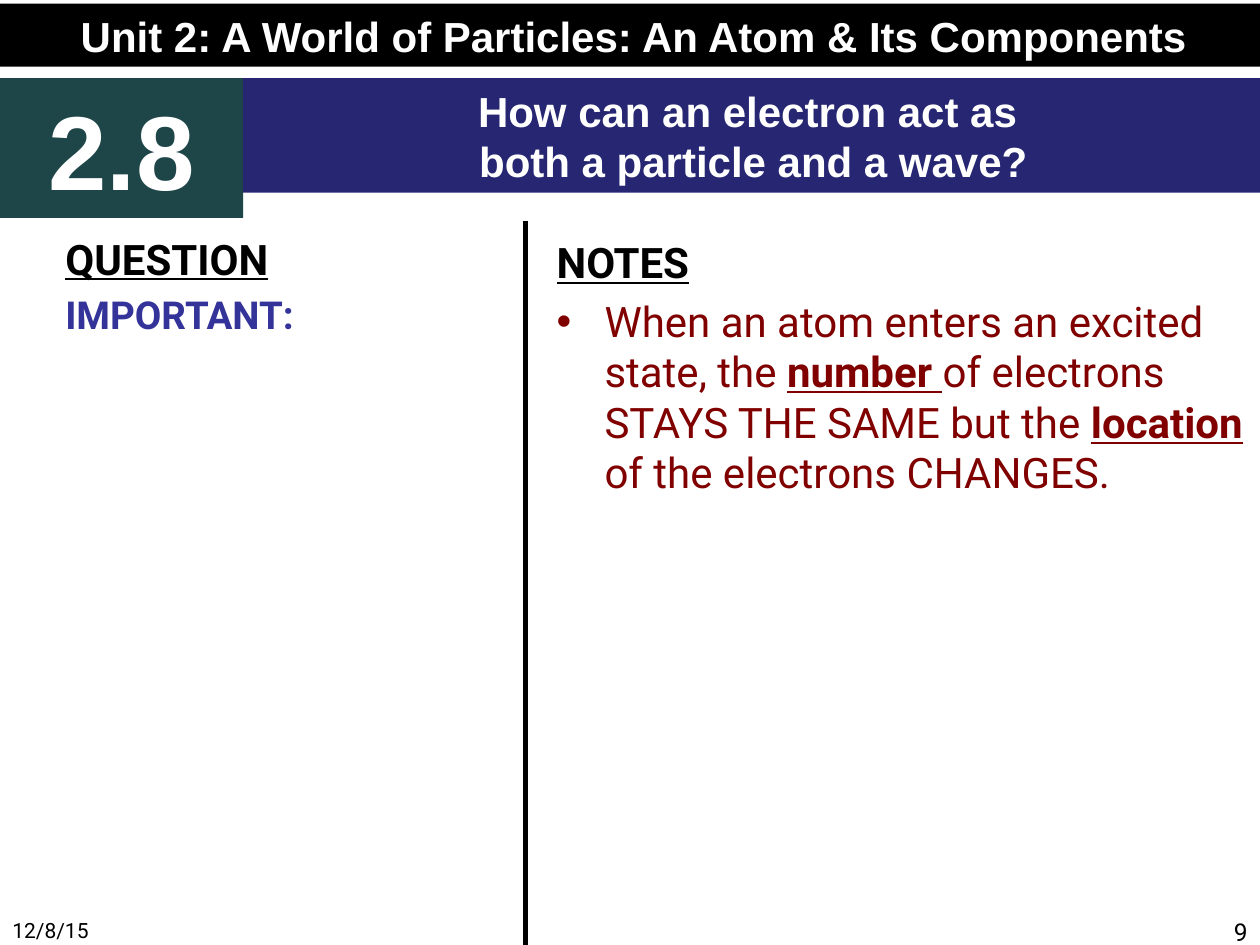
from pptx import Presentation
from pptx.dml.color import RGBColor
from pptx.enum.shapes import MSO_CONNECTOR, MSO_SHAPE
from pptx.enum.text import MSO_ANCHOR, PP_ALIGN
from pptx.oxml.ns import qn
from pptx.util import Inches, Pt
from lxml.etree import SubElement

BLACK = RGBColor(0x00, 0x00, 0x00)
WHITE = RGBColor(0xFF, 0xFF, 0xFF)
TEAL = RGBColor(0x1E, 0x46, 0x49)
NAVY = RGBColor(0x26, 0x26, 0x73)
BLUE = RGBColor(0x33, 0x33, 0x99)
MAROON = RGBColor(0x80, 0x00, 0x00)

PLAIN = {"bold": False, "underline": False}
KEYWORD = {"bold": True, "underline": True}
HEADING = {"name": "Roboto", "size": Pt(24), "bold": True, "underline": True}
BANNER = {"name": "Arial", "size": Pt(24), "bold": True}


def add_span(para, text, color, formats):
    span = para.add_run()
    span.text = text
    for name, value in formats.items():
        setattr(span.font, name, value)
    span.font.color.rgb = color


def add_text_box(page, box):
    frame = page.shapes.add_textbox(*map(Inches, box)).text_frame
    frame.word_wrap = True
    return frame


def add_banner(page, box, fill, lines, formats=BANNER):
    banner = page.shapes.add_shape(MSO_SHAPE.RECTANGLE, *map(Inches, box))
    banner.shadow.inherit = False
    banner.fill.solid()
    banner.fill.fore_color.rgb = fill
    banner.line.fill.background()
    frame = banner.text_frame
    frame.word_wrap = True
    frame.vertical_anchor = MSO_ANCHOR.MIDDLE
    for index, line in enumerate(lines):
        para = frame.add_paragraph() if index else frame.paragraphs[0]
        para.alignment = PP_ALIGN.CENTER
        add_span(para, line, WHITE, formats)


def add_divider(page, x, top, bottom):
    divider = page.shapes.add_connector(
        MSO_CONNECTOR.STRAIGHT, Inches(x), Inches(top), Inches(x), Inches(bottom))
    divider.line.color.rgb = BLACK
    divider.line.width = Pt(3)
    SubElement(divider._element.spPr, qn("a:effectLst"))


def add_bullet(para, indent):
    props = para._p.get_or_add_pPr()
    props.set("marL", str(indent))
    props.set("indent", str(-indent))
    SubElement(props, qn("a:buFont"), typeface="Arial")
    SubElement(props, qn("a:buChar"), char="•")


def add_question(page, box):
    frame = add_text_box(page, box)
    add_span(frame.paragraphs[0], "QUESTION", BLACK, HEADING)
    para = frame.add_paragraph()
    para.space_before = Pt(4.4)
    add_span(para, "IMPORTANT:", BLUE, HEADING | {"size": Pt(22), "underline": False})


def add_notes(page, box):
    frame = add_text_box(page, box)
    add_span(frame.paragraphs[0], "NOTES", BLACK, HEADING)
    para = frame.add_paragraph()
    para.space_before = Pt(4.8)
    add_bullet(para, Inches(0.38))
    for text, style in (
        ("When an atom enters an excited state, the ", PLAIN),
        ("number ", KEYWORD),
        ("of electrons STAYS THE SAME but the ", PLAIN),
        ("location", KEYWORD),
        (" of the electrons CHANGES.", PLAIN),
    ):
        add_span(para, text, MAROON, HEADING | style)


def add_footer(page, box, text, size, alignment):
    para = add_text_box(page, box).paragraphs[0]
    para.alignment = alignment
    add_span(para, text, BLACK, {"name": "Roboto", "size": Pt(size)})


def main():
    deck = Presentation()
    deck.slide_width, deck.slide_height = Inches(10), Inches(7.5)
    page = deck.slides.add_slide(deck.slide_layouts[6])
    add_footer(page, (0, 7.23, 2.33, 0.27), "12/8/15", 12, PP_ALIGN.LEFT)
    add_footer(page, (7.67, 7.23, 2.33, 0.27), "9", 14, PP_ALIGN.RIGHT)
    add_banner(page, (0, 0.03, 10.06, 0.5), BLACK,
               ["Unit 2: A World of Particles: An Atom & Its Components"])
    add_banner(page, (0, 0.62, 1.93, 1.11), TEAL, ["2.8"], BANNER | {"size": Pt(60)})
    add_banner(page, (1.93, 0.62, 8.1, 0.91), NAVY,
               ["How can an electron act as ", "both a particle and a wave?"])
    add_divider(page, 4.17, 1.75, 7.5)
    add_question(page, (0.42, 1.8, 3.67, 4.95))
    add_notes(page, (4.32, 1.83, 5.67, 4.95))
    deck.save("out.pptx")


if __name__ == "__main__":
    main()
